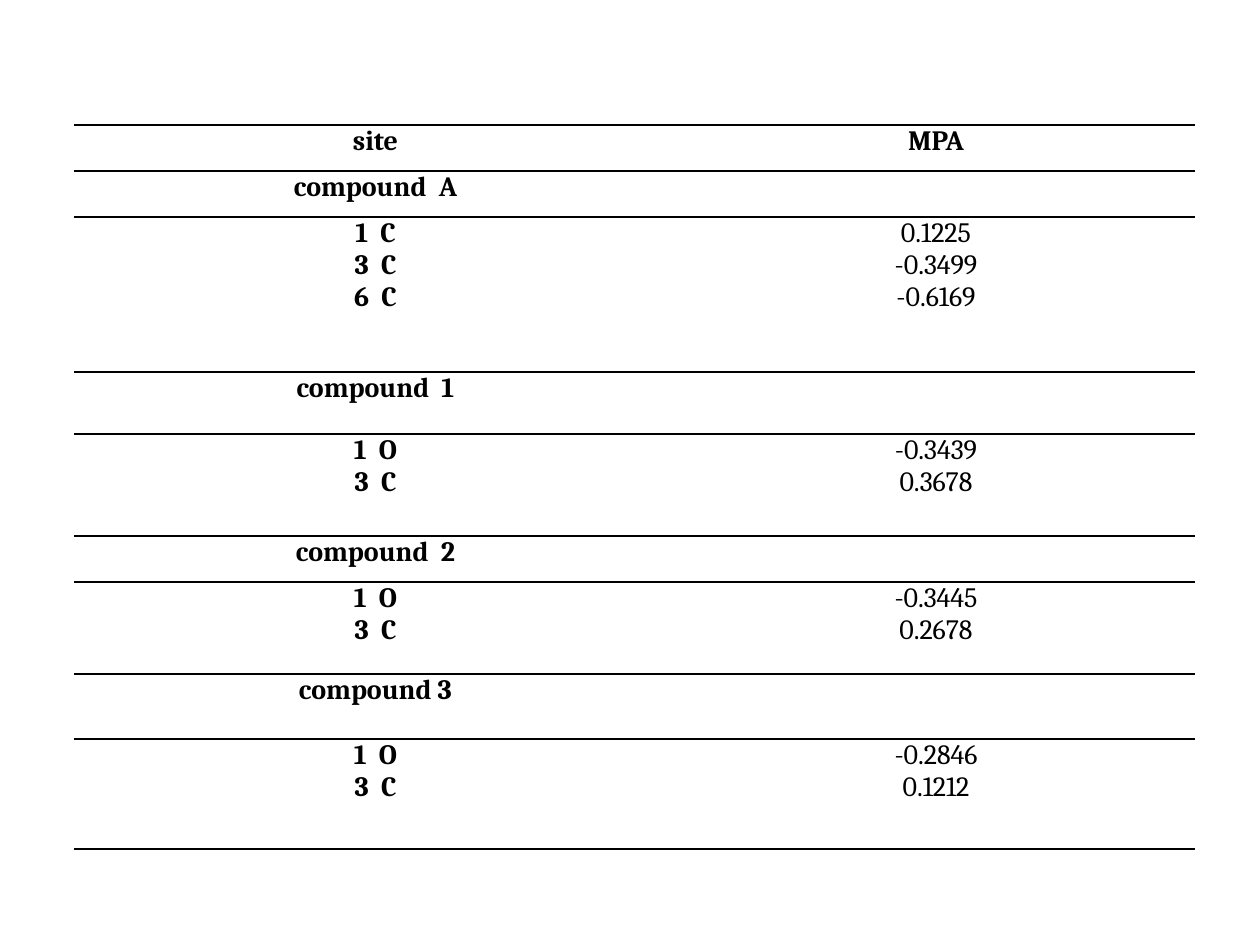
from lxml import etree
from pptx import Presentation
from pptx.dml.color import RGBColor
from pptx.enum.text import MSO_ANCHOR, PP_ALIGN
from pptx.oxml.ns import qn
from pptx.util import Pt

EMU_PER_PX = 914400 / 126
CENTER = PP_ALIGN.CENTER
TOP = MSO_ANCHOR.TOP
FONT = "Cambria"
BLACK = "000000"
BLANK_LAYOUT = 6

COLUMN_WIDTHS = [603, 518]
# Row height, site lines, MPA lines
ROWS = [
    (46, ["site"], ["MPA"]),
    (46, ["compound  A"], []),
    (155, ["1  C", "3  C", "6  C"], ["0.1225", "-0.3499", "-0.6169"]),
    (62, ["compound  1"], []),
    (102, ["1  O", "3  C"], ["-0.3439", "0.3678"]),
    (46, ["compound  2"], []),
    (92, ["1  O", "3  C"], ["-0.3445", "0.2678"]),
    (65, ["compound 3"], []),
    (110, ["1  O", "3  C"], ["-0.2846", "0.1212"]),
]


def px(length):
    return round(length * EMU_PER_PX)


def color(hex_code):
    return RGBColor.from_string(hex_code)


def write_lines(text_frame, lines, size=16, bold=False, hex_code=BLACK, align=CENTER):
    """Write one formatted paragraph for each line."""
    for index, line in enumerate(lines):
        paragraph = text_frame.add_paragraph() if index else text_frame.paragraphs[0]
        paragraph.alignment = align
        run = paragraph.add_run()
        run.text = line
        run.font.name = FONT
        run.font.size = Pt(size)
        run.font.bold = bold
        run.font.color.rgb = color(hex_code)


def rule_cell(cell, hex_code=BLACK, width=1):
    """Draw the top and bottom rules and hide the side borders."""
    properties = cell._tc.get_or_add_tcPr()
    for side in ("lnL", "lnR", "lnT", "lnB"):
        line = etree.SubElement(properties, qn(f"a:{side}"), w=str(Pt(width)))
        if side in ("lnL", "lnR"):
            etree.SubElement(line, qn("a:noFill"))
        else:
            fill = etree.SubElement(line, qn("a:solidFill"))
            etree.SubElement(fill, qn("a:srgbClr"), val=hex_code)


def format_cell(cell):
    cell.margin_left = cell.margin_right = px(9)
    cell.margin_top = cell.margin_bottom = 0
    cell.vertical_anchor = TOP
    rule_cell(cell)
    cell.fill.background()


def add_charge_table(slide, left, top):
    heights = [height for height, _, _ in ROWS]
    frame = slide.shapes.add_table(
        len(ROWS), len(COLUMN_WIDTHS), px(left), px(top),
        px(sum(COLUMN_WIDTHS)), px(sum(heights)))
    table = frame.table
    table.first_row = False
    table.horz_banding = False

    for column, width in zip(table.columns, COLUMN_WIDTHS):
        column.width = px(width)

    for row_index, (height, *columns) in enumerate(ROWS):
        table.rows[row_index].height = px(height)
        for column_index, lines in enumerate(columns):
            cell = table.cell(row_index, column_index)
            format_cell(cell)
            # The header row and the site column are bold
            is_heading = row_index == 0 or column_index == 0
            write_lines(cell.text_frame, lines, bold=is_heading)


def main():
    presentation = Presentation()
    presentation.slide_width = px(1260)
    presentation.slide_height = px(945)
    slide = presentation.slides.add_slide(presentation.slide_layouts[BLANK_LAYOUT])
    add_charge_table(slide, 74, 125)
    presentation.save("out.pptx")


if __name__ == "__main__":
    main()
